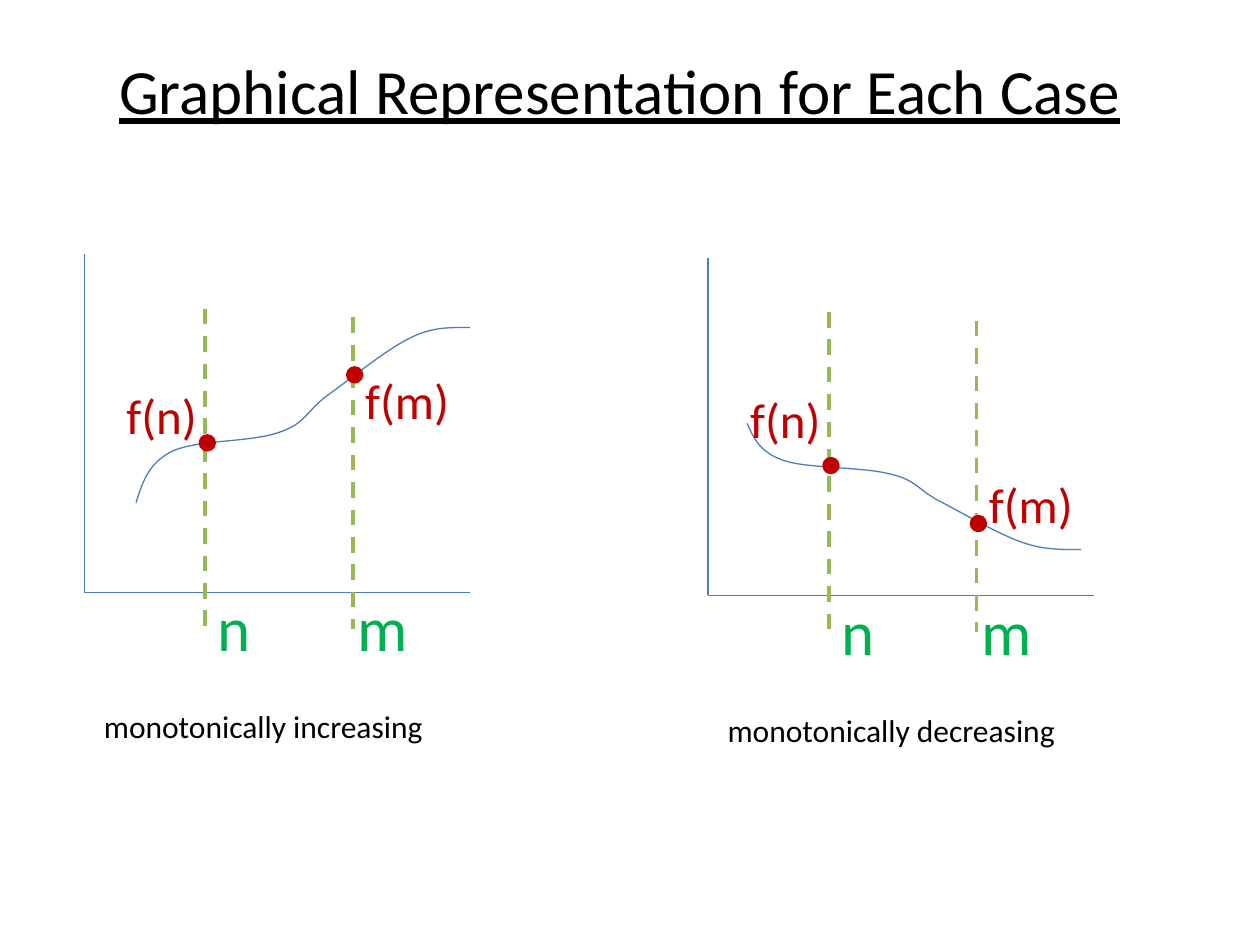
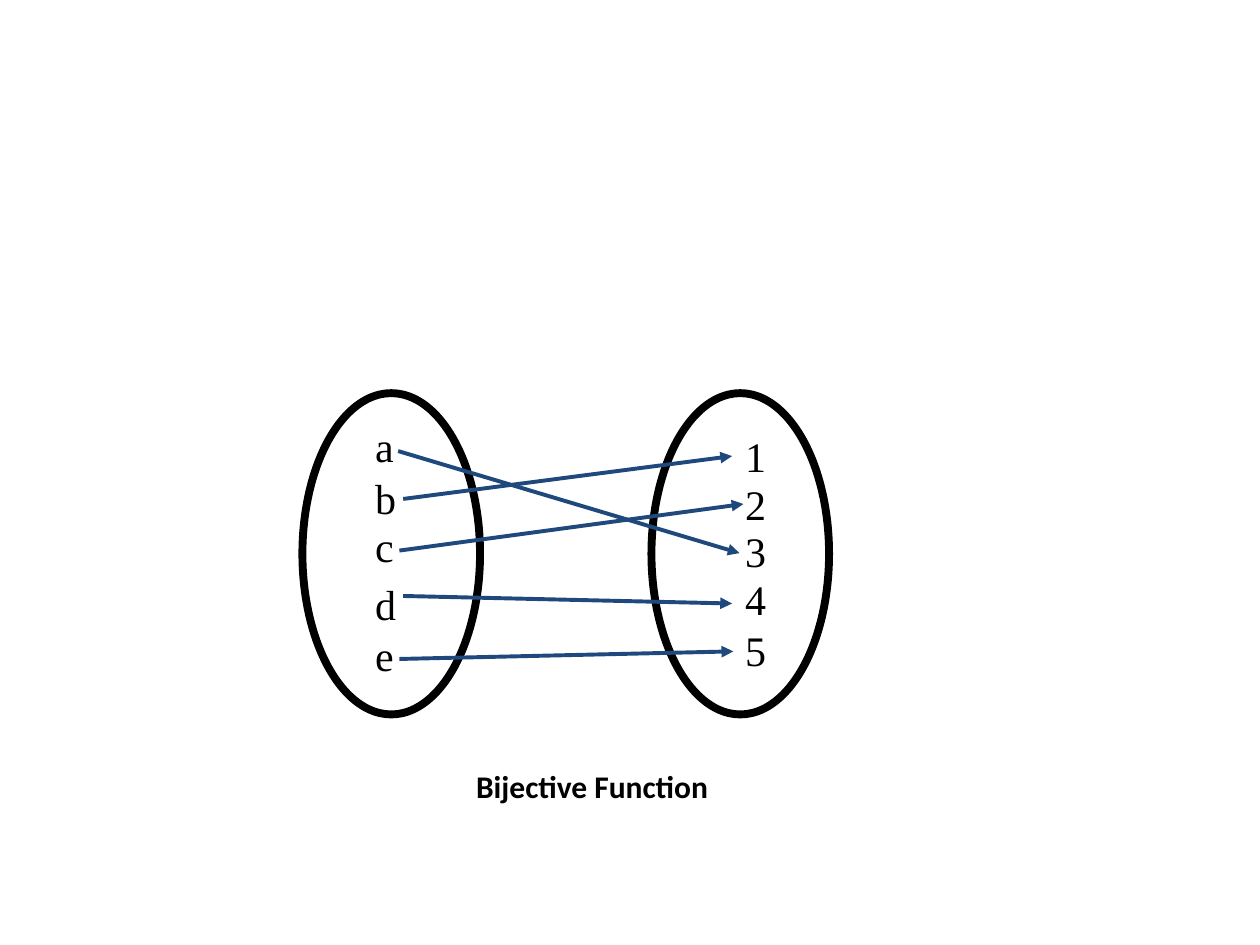
from lxml import etree
from pptx import Presentation
from pptx.dml.color import RGBColor
from pptx.enum.dml import MSO_LINE
from pptx.enum.shapes import MSO_CONNECTOR, MSO_SHAPE
from pptx.enum.text import MSO_ANCHOR, MSO_AUTO_SIZE, PP_ALIGN
from pptx.oxml.ns import qn
from pptx.util import Inches, Pt

STRAIGHT = MSO_CONNECTOR.STRAIGHT
OVAL = MSO_SHAPE.OVAL
DASH = MSO_LINE.DASH
LEFT, CENTER = PP_ALIGN.LEFT, PP_ALIGN.CENTER
TITLE_ONLY = 5

COLORS = {name: RGBColor.from_string(value) for name, value in {
    "black": "000000", "white": "FFFFFF", "axis": "4B7EBC", "guide": "98B955",
    "green": "00B050", "red": "C00000", "arrow": "1F497D"}.items()}

STYLES = {
    "title": {"name": "Calibri", "size": Pt(36), "underline": True},
    "variable": {"name": "Calibri", "size": Pt(36)},
    "value": {"name": "Calibri", "size": Pt(28)},
    "caption": {"name": "Calibri", "size": Pt(18)},
    "bold caption": {"name": "Calibri", "size": Pt(18), "bold": True},
    "element": {"name": "Times New Roman", "size": Pt(24)},
}

deck = Presentation()
deck.slide_width, deck.slide_height = Inches(10), Inches(7.5)

# The grid has 100 columns and 75 rows
COL = deck.slide_width // 100
ROW = deck.slide_height // 75


def write(box, area, text, style, color="black", align=LEFT):
    """Place a box on the grid and fill it with one formatted line."""
    left, top, width, height = area
    box.left, box.top = round(left * COL), round(top * ROW)
    box.width, box.height = round(width * COL), round(height * ROW)
    frame = box.text_frame
    frame.word_wrap = True
    frame.auto_size = MSO_AUTO_SIZE.SHAPE_TO_FIT_TEXT
    frame.vertical_anchor = MSO_ANCHOR.TOP
    para = frame.paragraphs[0]
    para.alignment = align
    span = para.add_run()
    span.text = text
    for attribute, value in STYLES[style].items():
        setattr(span.font, attribute, value)
    span.font.color.rgb = COLORS[color]


def draw_line(page, start, end, color, width, dash=None, arrow=False):
    """Draw a straight line between two grid points."""
    line = page.shapes.add_connector(
        STRAIGHT, round(start[0] * COL), round(start[1] * ROW),
        round(end[0] * COL), round(end[1] * ROW))
    line.line.color.rgb = COLORS[color]
    line.line.width = Pt(width)
    if dash:
        line.line.dash_style = dash
    if arrow:
        etree.SubElement(line.get_or_add_ln(), qn("a:tailEnd"), type="triangle")
    etree.SubElement(line._element.spPr, qn("a:effectLst"))


# Slide 1: monotonic functions
page = deck.slides.add_slide(deck.slide_layouts[TITLE_ONLY])
write(page.shapes.title, (5.1, 3.6, 88.2, 7.1),
      "Graphical Representation for Each Case", "title", align=CENTER)

# Bezier points of the curve, relative to its left end
CURVE = [(0, 0), (0.5, -1.6), (1, -3.2), (2.9, -4.1), (4.8, -5), (9.3, -4.8),
         (11.4, -5.6), (13.5, -6.3), (13.5, -7.3), (15.3, -8.6), (17, -9.8),
         (19.9, -12.2), (21.8, -13.1), (23.6, -14), (25.1, -13.9), (26.5, -13.9)]
STEPS = 12

# Axis corner, curve start, curve stretch, dot tops and value label tops
plots = [
    ("monotonically increasing", 6.7, 47, (10.8, 39.9), 1,
     (34.6, 29.2), (30.1, 28.9)),
    ("monotonically decreasing", 56.2, 47.25, (59.3, 33.6), -0.72,
     (36.4, 41), (30.4, 37.2)),
]
for caption, left, base, (curve_x, curve_y), stretch, dots, values in plots:
    # Axes and dashed guides
    draw_line(page, (left, base - 26.8), (left, base), "axis", 0.75)
    draw_line(page, (left + 30.6, base), (left, base), "axis", 0.75)
    for offset, rise in ((9.6, 22.5), (21.3, 21.8)):
        draw_line(page, (left + offset, base - rise), (left + offset, base + 2.9),
                  "guide", 2.25, DASH)

    # Variable names under the axis
    for name, offset in (("m", 20.7), ("n", 9.6)):
        write(page.shapes.add_textbox(0, 0, 0, 0),
              (left + offset, base - 0.75, 6.9, 6.5), name, "variable", "green")

    # Smooth curve
    points = [((curve_x + x) * COL, (curve_y + y * stretch) * ROW) for x, y in CURVE]
    outline = []
    for first in range(0, len(points) - 1, 3):
        for step in range(1, STEPS + 1):
            t = step / STEPS
            weights = ((1 - t) ** 3, 3 * t * (1 - t) ** 2, 3 * t * t * (1 - t), t ** 3)
            outline.append(tuple(
                round(sum(weight * point[axis] for weight, point
                          in zip(weights, points[first:first + 4])))
                for axis in (0, 1)))
    builder = page.shapes.build_freeform(round(points[0][0]), round(points[0][1]))
    builder.add_line_segments(outline, close=False)
    curve = builder.convert_to_shape()
    curve.shadow.inherit = False
    curve.fill.background()
    curve.line.color.rgb = COLORS["axis"]
    curve.line.width = Pt(0.75)

    # Dots where the guides meet the curve
    for offset, top in zip((9.2, 20.9), dots):
        dot = page.shapes.add_shape(OVAL, round((left + offset) * COL),
                                    round(top * ROW), round(1.1 * COL), round(1.1 * ROW))
        dot.shadow.inherit = False
        dot.fill.solid()
        dot.fill.fore_color.rgb = COLORS["red"]
        dot.line.color.rgb = COLORS["red"]
        dot.line.width = Pt(2)

    # Function values and caption
    for text, offset, top in zip(("f(n)", "f(m)"), (2.35, 21.3), values):
        write(page.shapes.add_textbox(0, 0, 0, 0),
              (left + offset, top, 9.4, 5.5), text, "value", "red")
    write(page.shapes.add_textbox(0, 0, 0, 0),
          (left + 0.56, base + 8.65, 33.1, 4), caption, "caption")

# Slide 2: bijective function
page = deck.slides.add_slide(deck.slide_layouts[TITLE_ONLY])
write(page.shapes.title, (29.8, 60.4, 34.4, 4), "Bijective Function",
      "bold caption", align=CENTER)

# The two sets and their elements
sets = [
    (24, 28.8, {"a": 32.9, "b": 37, "c": 40.8, "d": 45.4, "e": 49.5}),
    (51.7, 58.15, {"1": 33.7, "2": 37.5, "3": 41.2, "4": 45, "5": 49.1}),
]
for left, text_left, elements in sets:
    ring = page.shapes.add_shape(OVAL, round(left * COL), round(31.2 * ROW),
                                 round(14.1 * COL), round(25.5 * ROW))
    ring.shadow.inherit = False
    ring.fill.solid()
    ring.fill.fore_color.rgb = COLORS["white"]
    ring.line.color.rgb = COLORS["black"]
    ring.line.width = Pt(4.5)
    for element, top in elements.items():
        write(page.shapes.add_textbox(0, 0, 0, 0), (text_left, top, 5, 5),
              element, "element")

# Arrows a-3, c-2, b-1, d-4 and e-5
for start, end in [((31.6, 35.8), (58.7, 43.9)), ((31.7, 43.7), (59, 40)),
                   ((32, 39.6), (58.1, 36.2)), ((32, 47.3), (58.1, 47.9)),
                   ((31.7, 52.3), (58.2, 51.7))]:
    draw_line(page, start, end, "arrow", 2.25, arrow=True)

deck.save("out.pptx")
